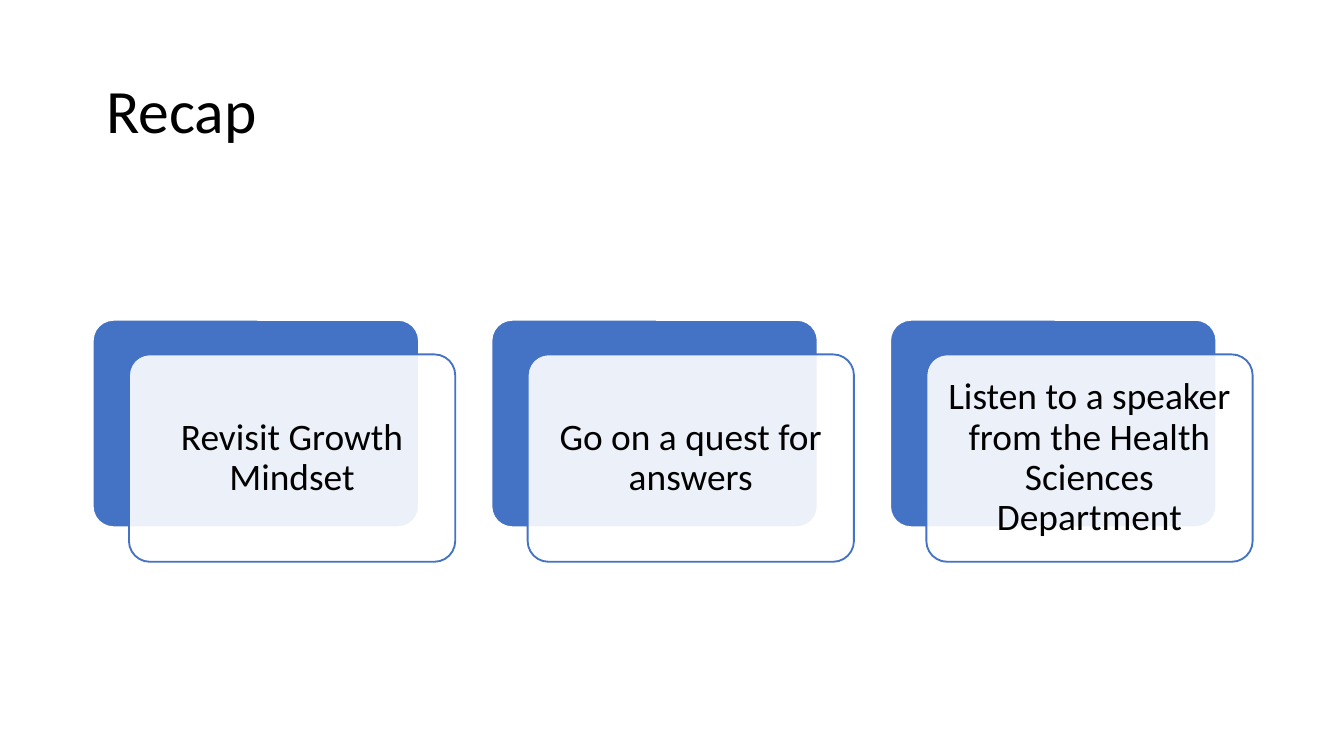
import dataclasses
import lxml.etree
import pptx
import pptx.dml.color
import pptx.enum.shapes
import pptx.enum.text
import pptx.oxml.ns
import pptx.util

Inch = pptx.util.Inches
Point = pptx.util.Pt
Color = pptx.dml.color.RGBColor.from_string
Align = pptx.enum.text.PP_ALIGN
Anchor = pptx.enum.text.MSO_ANCHOR
Round = pptx.enum.shapes.MSO_SHAPE.ROUNDED_RECTANGLE


@dataclasses.dataclass(frozen=True)
class Theme:
    font: str = "Calibri"
    ink: str = "000000"
    blue: str = "4472C4"
    white: str = "FFFFFF"
    head: int = 33
    body: int = 20
    space: int = 7
    inset: float = 0.08


THEME = Theme()
WIDE = 10
HIGH = WIDE * 9 / 16
TITLE = (0.69, 0.3, 8.62, 1.09)
BAND = (0.69, 2.38, 8.63, 1.8)
STEPS = [
    "Revisit Growth Mindset",
    "Go on a quest for answers",
    "Listen to a speaker from the Health Sciences Department",
]
CARD_COLS, CARD_ROWS, SHIFT, GAP = 9, 6, 1, 1
EDGE = 0.04


def set_text(frame, text, size, align):
    frame.text = text
    frame.word_wrap = True
    frame.vertical_anchor = Anchor.MIDDLE
    para = frame.paragraphs[0]
    para.alignment = align
    para.line_spacing = 0.9
    para.font.name = THEME.font
    para.font.size = Point(size)
    para.font.color.rgb = Color(THEME.ink)
    return para


def add_title(slide, box):
    title = slide.shapes.title
    title.left, title.top, title.width, title.height = map(Inch, box)
    set_text(title.text_frame, "Recap", THEME.head, Align.LEFT)


def add_panel(group, box, fill, line):
    panel = group.shapes.add_shape(Round, *map(Inch, box))
    panel.adjustments[0] = 0.1
    panel.shadow.inherit = False
    panel.fill.solid()
    panel.fill.fore_color.rgb = Color(fill)
    panel.line.color.rgb = Color(line)
    panel.line.width = Point(1)
    return panel


def add_label(group, box, text):
    frame = group.shapes.add_textbox(*map(Inch, box)).text_frame
    frame.margin_left = frame.margin_right = Inch(THEME.inset)
    frame.margin_top = frame.margin_bottom = Inch(THEME.inset)
    para = set_text(frame, text, THEME.body, Align.CENTER)
    para.space_after = Point(THEME.space)


def add_card(group, box, shift, text):
    left, top, width, height = box
    add_panel(group, box, THEME.blue, THEME.white)
    left, top = left + shift[0], top + shift[1]
    front = add_panel(group, (left, top, width, height), THEME.white, THEME.blue)
    tint = front.element.spPr.find("./a:solidFill/a:srgbClr", pptx.oxml.ns._nsmap)
    lxml.etree.SubElement(tint, pptx.oxml.ns.qn("a:alpha"), val="90000")
    inner = (left + EDGE, top + EDGE, width - 2 * EDGE, height - 2 * EDGE)
    add_label(group, inner, text)


def add_steps(slide, box, steps):
    left, top, width, height = box
    pitch = CARD_COLS + SHIFT + GAP
    col = width / (len(steps) * pitch - GAP)
    row = height / (CARD_ROWS + SHIFT)
    group = slide.shapes.add_group_shape()
    for num, text in enumerate(steps):
        card = (left + num * pitch * col, top, CARD_COLS * col, CARD_ROWS * row)
        add_card(group, card, (SHIFT * col, SHIFT * row), text)


def main():
    deck = pptx.Presentation()
    deck.slide_width, deck.slide_height = Inch(WIDE), Inch(HIGH)
    slide = deck.slides.add_slide(deck.slide_layouts.get_by_name("Title Only"))
    slide.background.fill.solid()
    slide.background.fill.fore_color.rgb = Color(THEME.white)
    add_title(slide, TITLE)
    add_steps(slide, BAND, STEPS)
    deck.save("out.pptx")


if __name__ == "__main__":
    main()
